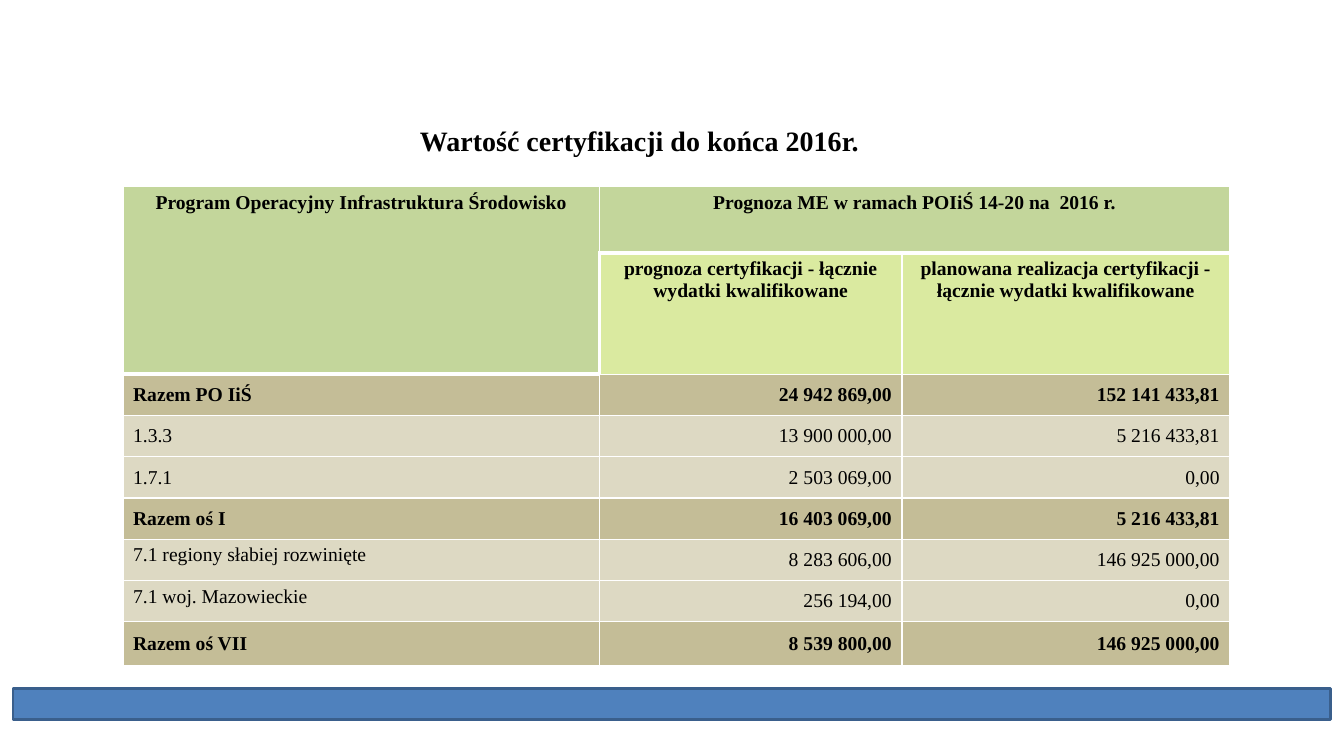
from lxml import etree
from pptx import Presentation
from pptx import util as u
from pptx.dml.color import RGBColor
from pptx.enum import shapes, text
from pptx.oxml.ns import qn

HUES = {"head": "C3D69B", "sub": "DAEAA0", "total": "C4BD97", "item": "DDD9C3",
        "bar": "4F81BD", "edge": "3A5F8C", "grid": "FFFFFF", "ink": "000000"}
LEFT, MID, RIGHT = text.PP_ALIGN.LEFT, text.PP_ALIGN.CENTER, text.PP_ALIGN.RIGHT
TOP, CENTRE, BASE = (text.MSO_ANCHOR.TOP, text.MSO_ANCHOR.MIDDLE,
                     text.MSO_ANCHOR.BOTTOM)

WIDTHS = [12.01, 7.62, 8.26]
HEIGHTS = [1.68, 3.05] + [1.04] * 6 + [1.1]
HEADS = [
    ["Program Operacyjny Infrastruktura Środowisko",
     "Prognoza ME w ramach POIiŚ 14-20 na  2016 r.", ""],
    ["", "prognoza certyfikacji - łącznie wydatki kwalifikowane",
     "planowana realizacja certyfikacji - łącznie wydatki kwalifikowane"],
]
ROWS = [
    ["Razem PO IiŚ", "24 942 869,00", "152 141 433,81"],
    ["1.3.3", "13 900 000,00", "5 216 433,81"],
    ["1.7.1", "2 503 069,00", "0,00"],
    ["Razem oś I", "16 403 069,00", "5 216 433,81"],
    ["7.1 regiony słabiej rozwinięte", "8 283 606,00", "146 925 000,00"],
    ["7.1 woj. Mazowieckie", "256 194,00", "0,00"],
    ["Razem oś VII", "8 539 800,00", "146 925 000,00"],
]
# Sides of a cell, by row and column, that carry the wide rule
WIDE = {(0, 0): "B", (0, 1): "B", (0, 2): "B", (1, 0): "B",
        (1, 1): "LT", (1, 2): "T", (2, 0): "T"}


def hue(name):
    return RGBColor.from_string(HUES[name])


class Page:
    """Holds the text style and the slide being filled."""
    style = {"name": "Times New Roman", "size": u.Pt(14), "bold": True}

    def __init__(self, deck):
        self.slide = deck.slides.add_slide(deck.slide_layouts[5])

    def label(self, frame, words, align, **extra):
        para = frame.paragraphs[0]
        para.alignment = align
        run = para.add_run()
        run.text = words
        for key, value in {**self.style, **extra}.items():
            setattr(run.font, key, value)
        run.font.color.rgb = hue("ink")

    def title(self, words, *box):
        shape = self.slide.shapes.title
        for key, value in zip(("left", "top", "width", "height"), box):
            setattr(shape, key, u.Cm(value))
        shape.text_frame.vertical_anchor = BASE
        self.label(shape.text_frame, words, MID, size=u.Pt(20))

    def bar(self, *box):
        shape = self.slide.shapes.add_shape(
            shapes.MSO_SHAPE.FLOWCHART_PROCESS, *map(u.Cm, box))
        shape.shadow.inherit = False
        shape.fill.solid()
        shape.fill.fore_color.rgb = hue("bar")
        shape.line.color.rgb = hue("edge")
        shape.line.width = u.Pt(2)

    def rule(self, cell, wide):
        """Draw the four borders of a cell; sides named in wide get 3 pt."""
        props = cell._tc.get_or_add_tcPr()
        for side in "LRTB":
            width = u.Pt(3 if side in wide else 1)
            line = etree.SubElement(props, qn("a:ln" + side), w=str(width))
            fill = etree.SubElement(line, qn("a:solidFill"))
            etree.SubElement(fill, qn("a:srgbClr"), val=HUES["grid"])

    def cell(self, cell, words, fill, align, anchor, bold, wide):
        self.rule(cell, wide)
        cell.fill.solid()
        cell.fill.fore_color.rgb = hue(fill)
        cell.vertical_anchor = anchor
        if words:
            self.label(cell.text_frame, words, align, bold=bold)

    def table(self, left, top):
        data = HEADS + ROWS
        size = (left, top, sum(WIDTHS), sum(HEIGHTS))
        grid = self.slide.shapes.add_table(
            len(data), len(WIDTHS), *map(u.Cm, size)).table
        grid.first_row = grid.horz_banding = False
        for col, width in zip(grid.columns, WIDTHS):
            col.width = u.Cm(width)
        for row, height in zip(grid.rows, HEIGHTS):
            row.height = u.Cm(height)
        grid.cell(0, 0).merge(grid.cell(1, 0))
        grid.cell(0, 1).merge(grid.cell(0, 2))
        for r, line in enumerate(data):
            for c, words in enumerate(line):
                if r < len(HEADS):
                    fill = "sub" if r and c else "head"
                    look = fill, MID, TOP, True
                else:
                    total = line[0].startswith("Razem")
                    high = words.startswith("7.1 ")
                    look = ("total" if total else "item", RIGHT if c else LEFT,
                            TOP if high else CENTRE, total)
                self.cell(grid.cell(r, c), words, *look, WIDE.get((r, c), ""))


def main():
    deck = Presentation()
    deck.slide_width, deck.slide_height = u.Cm(33.87), u.Cm(19.05)
    page = Page(deck)
    page.bar(0.33, 17.35, 33.2, 0.79)
    page.table(3.1, 4.7)
    page.title("Wartość certyfikacji do końca 2016r.", 8.71, 2.18, 14.81, 1.9)
    deck.save("out.pptx")


if __name__ == "__main__":
    main()
